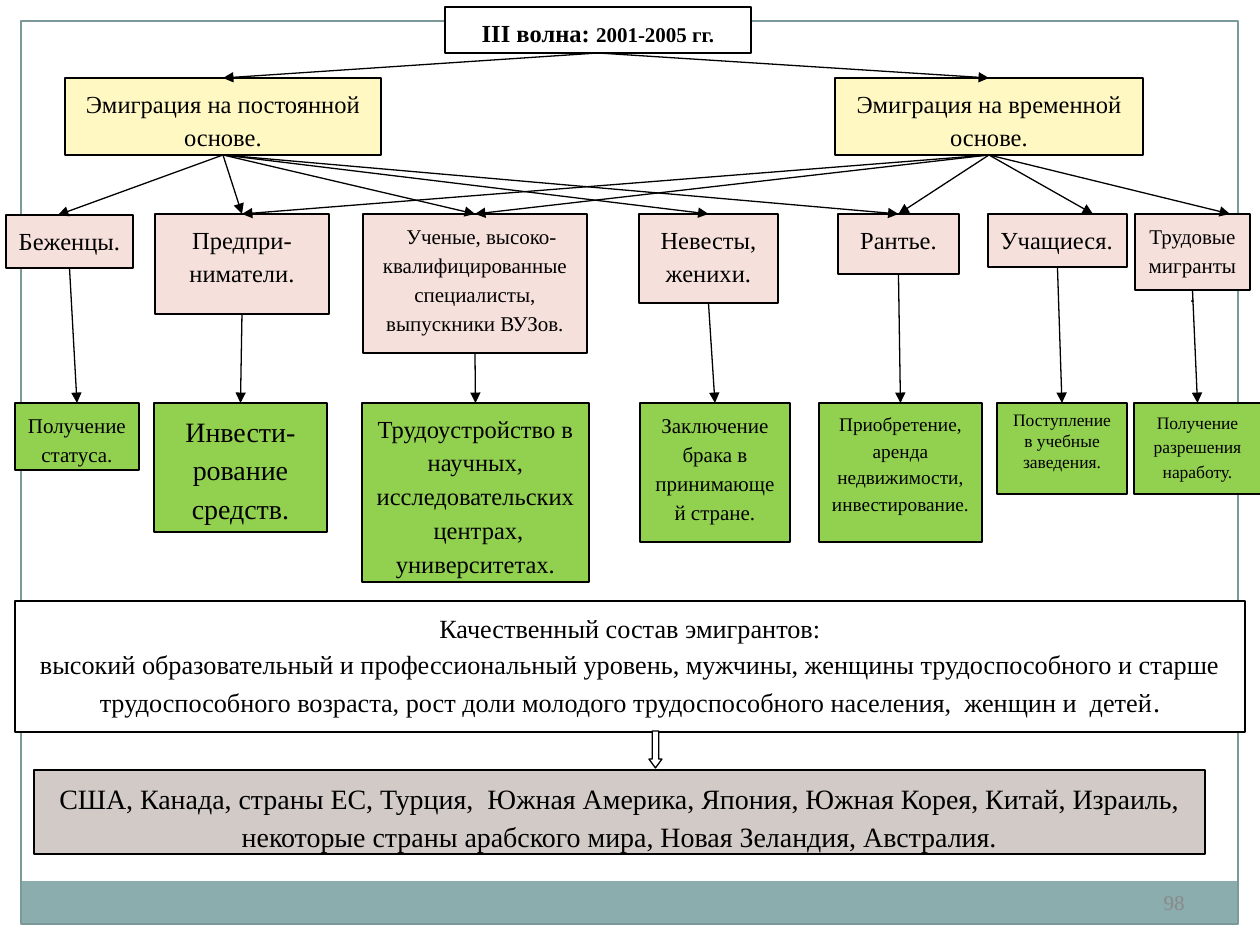
import pptx
import pptx.dml.color
import pptx.enum.shapes
import pptx.enum.text
import pptx.oxml.ns
import pptx.util
from lxml import etree

SCALE = 914400 / 126
RECTANGLE = pptx.enum.shapes.MSO_SHAPE.RECTANGLE
ALIGN = pptx.enum.text.PP_ALIGN
BLACK, WHITE, TEAL = "000000", "FFFFFF", "8CADAE"
YELLOW, PINK, GREEN, TAUPE = "FFF8C2", "F6E0DB", "92D050", "D1CAC6"

COLUMNS = [
    dict(reason="Беженцы.", reason_box=(6, 60, 127, 53), arrival=58, sources=("permanent",),
         goal="Получение статуса.", goal_box=(15, 248, 124, 67), goal_format=dict(size=12)),
    dict(reason="Предпри-\nниматели.", reason_box=(155, 59, 174, 100), sources=("permanent", "temporary"),
         goal="Инвести- рование средств.", goal_box=(154, 248, 173, 129), goal_format=dict(size=16)),
    dict(reason="Ученые, высоко-квалифицированные специалисты, выпускники ВУЗов.",
         reason_box=(363, 59, 224, 139), reason_format=dict(size=12, indent=13),
         sources=("permanent", "temporary"),
         goal="Трудоустройство в научных, исследовательских  центрах, университетах.",
         goal_box=(362, 248, 227, 179)),
    dict(reason="Невесты, женихи.", reason_box=(639, 59, 139, 89), sources=("permanent",),
         goal="Заключение брака в принимающей стране.",
         goal_box=(640, 248, 150, 139), goal_format=dict(size=12)),
    dict(reason="Рантье.", reason_box=(838, 59, 121, 60), sources=("permanent", "temporary"),
         goal="Приобретение, аренда недвижимости, инвестирование.",
         goal_box=(819, 248, 163, 139), goal_format=dict(size=11)),
    dict(reason="Учащиеся.", reason_box=(988, 59, 139, 53), arrival=1093, sources=("temporary",),
         reason_format=dict(align=ALIGN.LEFT),
         goal="Поступление\nв учебные заведения.", goal_box=(997, 248, 130, 91),
         goal_format=dict(size=10, spacing=1.0)),
    dict(reason="Трудовые мигранты.", reason_box=(1135, 59, 115, 76), arrival=1230,
         reason_format=dict(size=12), sources=("temporary",),
         goal="Получение разрешения наработу.", goal_box=(1134, 248, 127, 91),
         goal_format=dict(size=10)),
]


def px(value):
    """Turn px into EMU."""
    return pptx.util.Emu(round(value * SCALE))


def color(value):
    """Turn a hex string into a colour."""
    return pptx.dml.color.RGBColor.from_string(value)


def inside(region, box):
    """Shift a box by the corner of its region."""
    return (region[0] + box[0], region[1] + box[1], box[2], box[3])


def top(box):
    """Return the middle of the upper edge."""
    return box[0] + box[2] / 2, box[1]


def bottom(box):
    """Return the middle of the lower edge."""
    return box[0] + box[2] / 2, box[1] + box[3]


def write(shape, text, size=14, bold=False, align=ALIGN.CENTER, spacing=1.15,
          ink=BLACK, indent=0, ending="", ending_size=None):
    """Write paragraphs, with an optional last run in another size."""
    frame = shape.text_frame
    frame.word_wrap = True
    frame.auto_size = pptx.enum.text.MSO_AUTO_SIZE.NONE
    frame.vertical_anchor = pptx.enum.text.MSO_ANCHOR.TOP
    frame.text = text
    if ending:
        frame.paragraphs[-1].add_run().text = ending
    for paragraph in frame.paragraphs:
        paragraph.alignment = align
        paragraph.line_spacing = spacing
        for run in paragraph.runs:
            run.font.name = "Times New Roman"
            run.font.size = pptx.util.Pt(size)
            run.font.bold = bold
            run.font.color.rgb = color(ink)
    if ending:
        frame.paragraphs[-1].runs[-1].font.size = pptx.util.Pt(ending_size)
    if indent:
        for properties in shape.element.iter(pptx.oxml.ns.qn("a:pPr")):
            properties.set("indent", str(px(indent)))


def paint(shape, fill, line):
    """Set the fill and outline, either of which may be absent."""
    if fill:
        shape.fill.solid()
        shape.fill.fore_color.rgb = color(fill)
    else:
        shape.fill.background()
    if line:
        shape.line.color.rgb = color(line)
        shape.line.width = pptx.util.Pt(0.75)
    else:
        shape.line.fill.background()


def add_box(slide, box, fill, line=BLACK, kind=RECTANGLE):
    """Add a flat preset shape."""
    shape = slide.shapes.add_shape(kind, *map(px, box))
    shape.shadow.inherit = False
    paint(shape, fill, line)
    return shape


def add_arrow(slide, start, end):
    """Add a line with an arrowhead at its end."""
    arrow = slide.shapes.add_connector(
        pptx.enum.shapes.MSO_CONNECTOR.STRAIGHT, *map(px, (*start, *end)))
    arrow.line.color.rgb = color(BLACK)
    arrow.line.width = pptx.util.Pt(0.75)
    qn = pptx.oxml.ns.qn
    outline = arrow.element.find(".//" + qn("a:ln"))
    etree.SubElement(outline, qn("a:tailEnd"), type="triangle")
    etree.SubElement(outline.getparent(), qn("a:effectLst"))


def add_background(slide, region):
    """Add the frame, the footer band and the page number."""
    left, upper, width, height = region
    band = (left, upper + height - 43, width, 43)
    add_box(slide, band, TEAL, None)
    add_box(slide, region, None, "7C999A")
    number = slide.shapes.add_textbox(*map(px, inside(band, (1086, 0, 90, 43))))
    write(number, "98", size=12, align=ALIGN.RIGHT, spacing=1.0, ink="898989")
    number.text_frame.vertical_anchor = pptx.enum.text.MSO_ANCHOR.MIDDLE


def add_heading(slide, region):
    """Add the title and two kinds of emigration; return their boxes."""
    title = slide.shapes.title
    title_box = inside(region, (380, 0, 306, 46))
    title.left, title.top, title.width, title.height = map(px, title_box)
    title.element.getparent().append(title.element)
    paint(title, WHITE, BLACK)
    write(title, "III волна: ", bold=True, ending="2001-2005 гг.", ending_size=12)
    kinds = {"permanent": ("Эмиграция на постоянной основе.", (0, 71, 316, 77)),
             "temporary": ("Эмиграция на временной основе.", (770, 71, 308, 77))}
    boxes = {}
    for name, (text, box) in kinds.items():
        boxes[name] = inside(region, box)
        write(add_box(slide, boxes[name], YELLOW), text)
        add_arrow(slide, bottom(title_box), top(boxes[name]))
    return boxes


def add_columns(slide, region, kinds):
    """Add each group of emigrants with its goal and arrows."""
    for column in COLUMNS:
        reason_box = inside(region, column["reason_box"])
        goal_box = inside(region, column["goal_box"])
        write(add_box(slide, reason_box, PINK), column["reason"], **column.get("reason_format", {}))
        write(add_box(slide, goal_box, GREEN), column["goal"], **column.get("goal_format", {}))
        center, edge = top(reason_box)
        arrival = region[0] + column["arrival"] if "arrival" in column else center
        for source in column["sources"]:
            add_arrow(slide, bottom(kinds[source]), (arrival, edge))
        add_arrow(slide, bottom(reason_box), top(goal_box))


def add_summary(slide, region):
    """Add the make-up of emigrants and the countries they go to."""
    makeup = add_box(slide, inside(region, (0, 0, 1230, 131)), WHITE)
    write(makeup, "Качественный состав эмигрантов:\n"
          "высокий образовательный и профессиональный уровень, мужчины, женщины "
          "трудоспособного и старше трудоспособного возраста, рост доли молодого "
          "трудоспособного населения,  женщин и  детей", size=15, ending=".", ending_size=16)
    countries = add_box(slide, inside(region, (19, 169, 1171, 84)), TAUPE)
    write(countries, "США, Канада, страны ЕС, Турция,  Южная Америка, Япония, Южная Корея, "
          "Китай, Израиль, некоторые страны арабского мира, Новая Зеландия, Австралия.", size=16)
    arrow = add_box(slide, inside(region, (634, 130, 13, 37)), WHITE,
                    kind=pptx.enum.shapes.MSO_SHAPE.DOWN_ARROW)
    arrow.adjustments[0] = 0.5
    arrow.adjustments[1] = 0.68


def main():
    """Build and save the slide."""
    presentation = pptx.Presentation()
    presentation.slide_width, presentation.slide_height = px(1260), px(945)
    slide = presentation.slides.add_slide(presentation.slide_layouts[5])
    add_background(slide, (21, 21, 1217, 903))
    kinds = add_heading(slide, (65, 7, 1078, 148))
    add_columns(slide, (0, 155, 1260, 427), kinds)
    add_summary(slide, (15, 601, 1230, 253))
    presentation.save("out.pptx")


if __name__ == "__main__":
    main()
